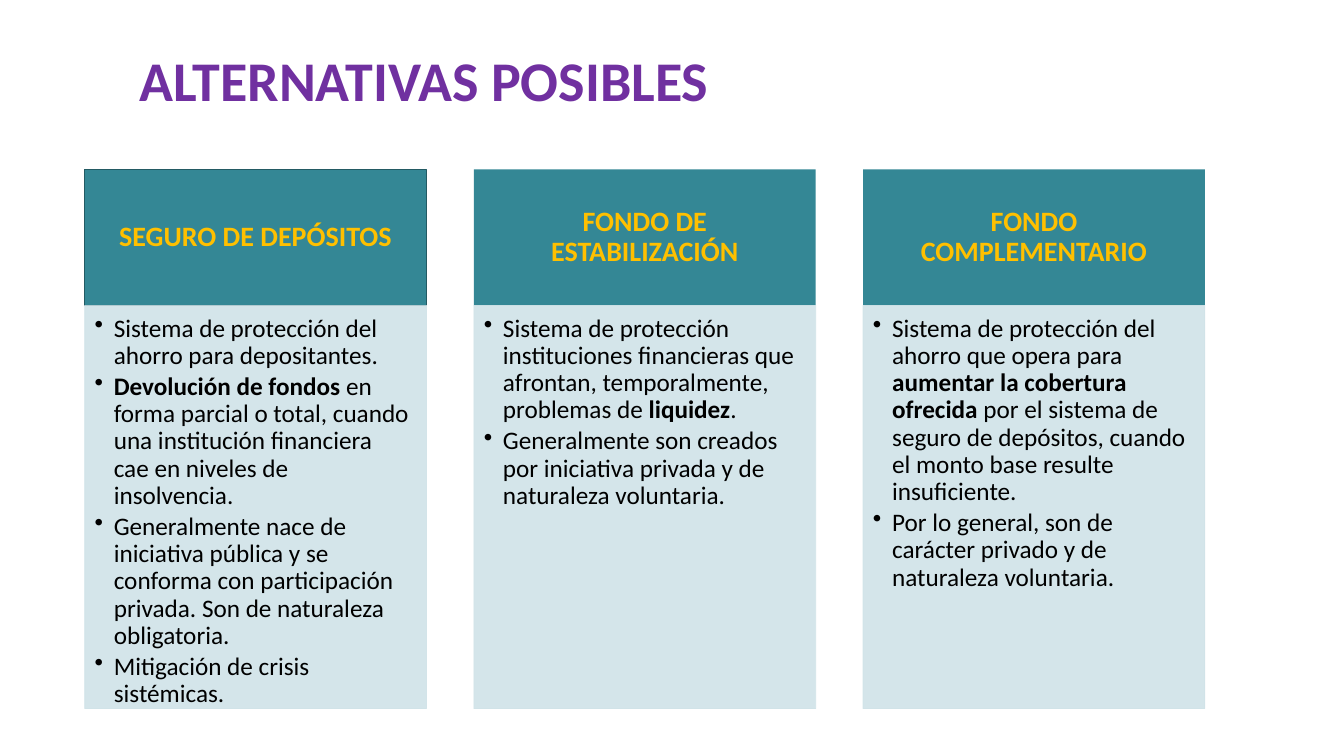
from dataclasses import dataclass
from typing import Optional

import pptx
import pptx.dml.color
import pptx.enum.shapes
import pptx.enum.text
import pptx.oxml
import pptx.oxml.ns
import pptx.util

Inches, Pt = pptx.util.Inches, pptx.util.Pt
ALIGN, ANCHOR = pptx.enum.text.PP_ALIGN, pptx.enum.text.MSO_ANCHOR

COLORS = {
    "title": "7030A0",
    "header": "348795",
    "header_line": "235A63",
    "header_text": "FFC000",
    "body": "D0E3E8",
    "body_text": "000000",
}

# Column grid, in inches
LEFT, COL_W, COL_PITCH = 0.84, 3.39, 3.86
HEADER_TOP, BODY_TOP, BODY_H = 1.68, 3.03, 4.0
HEADER_H = BODY_TOP - HEADER_TOP
HANGING = 0.19

Run = tuple[str, bool]  # text, bold


@dataclass
class Option:
    name: str
    bullets: list[list[Run]]
    header_line: Optional[str] = None


OPTIONS = [
    Option("SEGURO DE DEPÓSITOS", [
        [("Sistema de protección del ahorro para depositantes.", False)],
        [("Devolución de fondos ", True),
         ("en forma parcial o total, cuando una institución financiera "
          "cae en niveles de insolvencia.", False)],
        [("Generalmente nace de iniciativa pública y se conforma con "
          "participación privada. Son de naturaleza obligatoria.", False)],
        [("Mitigación de crisis sistémicas.", False)],
    ], "header_line"),
    Option("FONDO DE ESTABILIZACIÓN", [
        [("Sistema de protección instituciones financieras que afrontan, "
          "temporalmente, problemas de ", False),
         ("liquidez", True), (".", False)],
        [("Generalmente son creados por iniciativa privada y de "
          "naturaleza voluntaria.", False)],
    ]),
    Option("FONDO COMPLEMENTARIO", [
        [("Sistema de protección del ahorro que opera para ", False),
         ("aumentar la cobertura ofrecida ", True),
         ("por el sistema de seguro de depósitos, cuando el monto base "
          "resulte insuficiente.", False)],
        [("Por lo general, son de carácter privado y de naturaleza "
          "voluntaria.", False)],
    ]),
]


def rgb(key: str) -> pptx.dml.color.RGBColor:
    return pptx.dml.color.RGBColor.from_string(COLORS[key])


def apply(target: object, values: dict) -> None:
    for name, value in values.items():
        setattr(target, name, value)


def frame_format(anchor, left: float, top: float, right: float, bottom: float) -> dict:
    return {
        "word_wrap": True,
        "auto_size": pptx.enum.text.MSO_AUTO_SIZE.NONE,
        "vertical_anchor": anchor,
        "margin_left": Inches(left), "margin_top": Inches(top),
        "margin_right": Inches(right), "margin_bottom": Inches(bottom),
    }


def add_run(p, text: str, size: float, color: str, bold: bool) -> None:
    r = p.add_run()
    r.text = text
    apply(r.font, {"name": "Calibri", "size": Pt(size), "bold": bold})
    r.font.color.rgb = rgb(color)


def add_box(s, left: float, top: float, height: float, fill: str,
            line: Optional[str], line_width: float):
    sp = s.shapes.add_shape(pptx.enum.shapes.MSO_SHAPE.RECTANGLE, Inches(left),
                            Inches(top), Inches(COL_W), Inches(height))
    sp.shadow.inherit = False
    sp.fill.solid()
    sp.fill.fore_color.rgb = rgb(fill)
    if line:
        sp.line.color.rgb = rgb(line)
        sp.line.width = Pt(line_width)
    else:
        sp.line.fill.background()
    return sp


def make_translucent(sp, percent: int) -> None:
    """Set the opacity of both the fill and the outline."""
    for color in sp._element.spPr.iter(pptx.oxml.ns.qn("a:srgbClr")):
        color.append(pptx.oxml.parse_xml(
            f'<a:alpha {pptx.oxml.ns.nsdecls("a")} val="{percent * 1000}"/>'))


def set_bullet(p) -> None:
    pPr = p._p.get_or_add_pPr()
    pPr.set("marL", str(Inches(HANGING)))
    pPr.set("indent", str(-Inches(HANGING)))
    pPr.append(pptx.oxml.parse_xml(
        f'<a:buChar {pptx.oxml.ns.nsdecls("a")} char="•"/>'))


def add_title(s, text: str) -> None:
    title = s.shapes.title
    apply(title, {"left": Inches(1.28), "top": Inches(0.48),
                  "width": Inches(11.12), "height": Inches(0.79)})
    tf = title.text_frame
    apply(tf, frame_format(ANCHOR.TOP, 0.1, 0.05, 0.1, 0.05))
    p = tf.paragraphs[0]
    apply(p, {"alignment": ALIGN.LEFT, "line_spacing": 0.9})
    add_run(p, text, 40, "title", True)


def add_option(s, option: Option, left: float) -> None:
    header = add_box(s, left, HEADER_TOP, HEADER_H, "header", option.header_line, 0.75)
    tf = header.text_frame
    apply(tf, frame_format(ANCHOR.MIDDLE, 0.16, 0.09, 0.16, 0.09))
    p = tf.paragraphs[0]
    apply(p, {"alignment": ALIGN.CENTER, "line_spacing": 0.9})
    add_run(p, option.name, 20, "header_text", True)

    body = add_box(s, left, BODY_TOP, BODY_H, "body", "body", 0.5)
    make_translucent(body, 90)
    tf = body.text_frame
    apply(tf, frame_format(ANCHOR.TOP, 0.1, 0.1, 0.14, 0.16))
    for i, runs in enumerate(option.bullets):
        p = tf.add_paragraph() if i else tf.paragraphs[0]
        apply(p, {"alignment": ALIGN.LEFT, "level": 1,
                  "line_spacing": 0.9, "space_after": Pt(2.7)})
        set_bullet(p)
        for text, bold in runs:
            add_run(p, text, 18, "body_text", bold)


def main() -> None:
    prs = pptx.Presentation()
    apply(prs, {"slide_width": Inches(13.33), "slide_height": Inches(7.5)})
    s = prs.slides.add_slide(prs.slide_layouts.get_by_name("Title Only"))
    add_title(s, "ALTERNATIVAS POSIBLES")
    for column, option in enumerate(OPTIONS):
        add_option(s, option, LEFT + column * COL_PITCH)
    prs.save("out.pptx")


if __name__ == "__main__":
    main()
